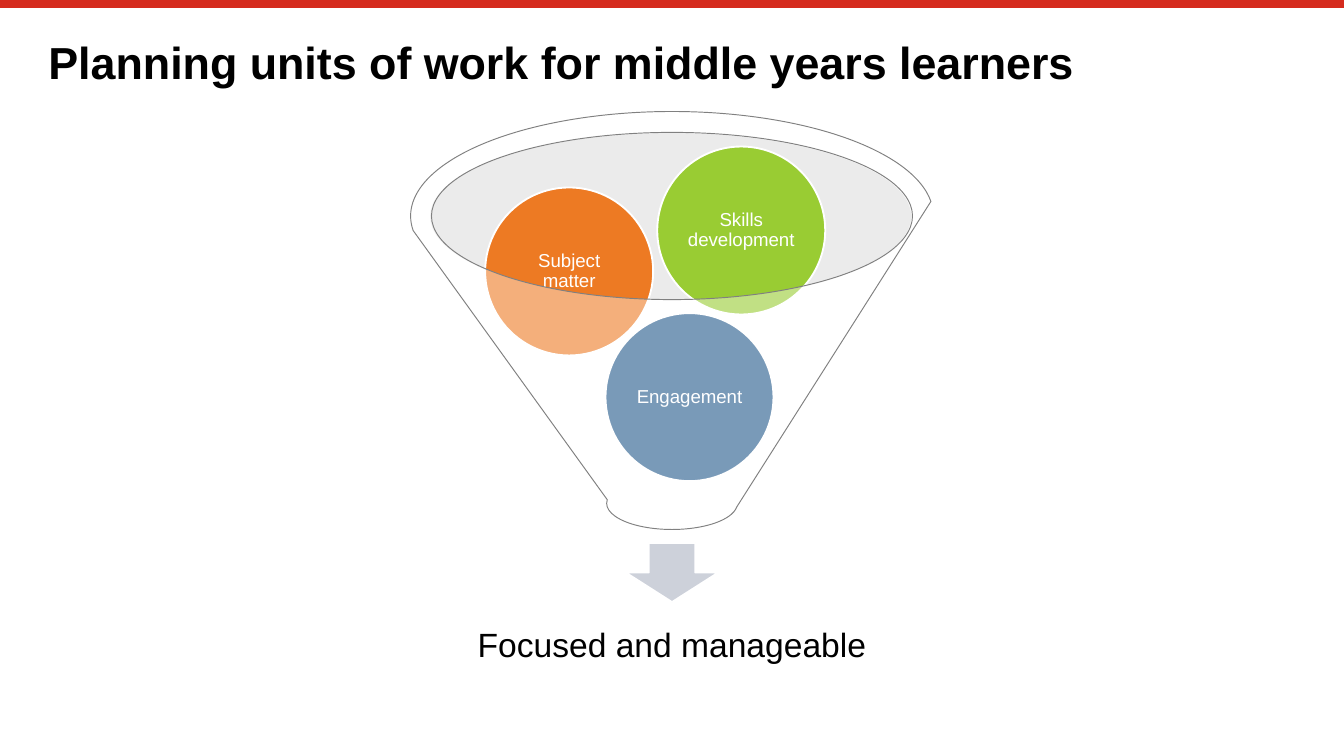
from dataclasses import dataclass
from typing import Any, Optional

import pptx
import pptx.dml.color
import pptx.enum.shapes
import pptx.enum.text
import pptx.oxml.ns
import pptx.util
from lxml import etree

WIDE = 10
HIGH = WIDE * 9 / 16
CELL = WIDE / 100
FONT = "Arial"
SHAPE = pptx.enum.shapes.MSO_SHAPE
ALIGN = pptx.enum.text.PP_ALIGN
ANCHOR = pptx.enum.text.MSO_ANCHOR


@dataclass
class Box:
    col: float
    row: float
    cols: float
    rows: float

    def place(self) -> list[int]:
        return [grid(n) for n in (self.col, self.row, self.cols, self.rows)]


@dataclass
class Ball:
    label: str
    col: float
    row: float
    fill: str


BALL_SIZE = 12.5
BALLS = [
    Ball("Engagement", 45.05, 23.3, "21578A"),
    Ball("Subject matter", 36.1, 13.95, "ED7A23"),
    Ball("Skills development", 48.9, 10.9, "99CC33"),
]


def grid(count: float) -> int:
    return pptx.util.Inches(count * CELL)


def paint(target: Any, color: str) -> None:
    target.rgb = pptx.dml.color.RGBColor.from_string(color)


def write(shape: Any, text: str, *, size: float, color: str = "000000",
          bold: bool = False, align: Any = ALIGN.CENTER,
          anchor: Any = ANCHOR.MIDDLE, inset: float = 0) -> None:
    frame = shape.text_frame
    frame.word_wrap = True
    frame.auto_size = pptx.enum.text.MSO_AUTO_SIZE.NONE
    frame.vertical_anchor = anchor
    for side in ("left", "top", "right", "bottom"):
        setattr(frame, f"margin_{side}", pptx.util.Inches(inset))
    frame.text = text
    para = frame.paragraphs[0]
    para.alignment = align
    para.line_spacing = 0.9
    para.space_before = pptx.util.Pt(0)
    para.font.name = FONT
    para.font.size = pptx.util.Pt(size)
    para.font.bold = bold
    paint(para.font.color, color)


def draw(slide: Any, kind: Any, box: Box, fill: str, *, alpha: Optional[int] = None,
         line: Optional[str] = None, weight: float = 1) -> Any:
    shape = slide.shapes.add_shape(kind, *box.place())
    shape.shadow.inherit = False
    shape.fill.solid()
    paint(shape.fill.fore_color, fill)
    if alpha is not None:
        tint = shape.fill._xPr.find(".//" + pptx.oxml.ns.qn("a:srgbClr"))
        etree.SubElement(tint, pptx.oxml.ns.qn("a:alpha"), val=str(alpha * 1000))
    if line:
        paint(shape.line.color, line)
        shape.line.width = pptx.util.Pt(weight)
    else:
        shape.line.fill.background()
    return shape


def add_stripe(slide: Any) -> None:
    row = grid(0.3)
    stripe = slide.shapes.add_connector(
        pptx.enum.shapes.MSO_CONNECTOR.STRAIGHT, 0, row, grid(100), row)
    paint(stripe.line.color, "D52B1E")
    stripe.line.width = pptx.util.Pt(4.2)
    etree.SubElement(stripe._element.spPr, pptx.oxml.ns.qn("a:effectLst"))


def add_title(slide: Any, text: str) -> None:
    title = slide.shapes.title
    title.left, title.top, title.width, title.height = Box(3.6, 3, 92.9, 3.9).place()
    write(title, text, size=24, bold=True, align=ALIGN.LEFT, anchor=ANCHOR.TOP)


def add_ball(slide: Any, ball: Ball) -> None:
    box = Box(ball.col, ball.row, BALL_SIZE, BALL_SIZE)
    shape = draw(slide, SHAPE.OVAL, box, ball.fill, line="FFFFFF")
    write(shape, ball.label, size=10, color="FFFFFF", inset=0.01)


def main() -> None:
    deck = pptx.Presentation()
    deck.slide_width = pptx.util.Inches(WIDE)
    deck.slide_height = pptx.util.Inches(HIGH)
    slide = deck.slides.add_slide(deck.slide_layouts.get_by_name("Title Only"))

    add_stripe(slide)
    add_title(slide, "Planning units of work for middle years learners")
    draw(slide, SHAPE.OVAL, Box(32, 9.9, 35.8, 12.4), "CDCDCD", alpha=40)
    draw(slide, SHAPE.DOWN_ARROW, Box(46.55, 40.4, 6.9, 4.4), "CDD1DA", line="FFFFFF")
    result = slide.shapes.add_textbox(*Box(33.35, 43.95, 33.3, 8.3).place())
    write(result, "Focused and manageable", size=18, inset=0.14)
    for ball in BALLS:
        add_ball(slide, ball)
    draw(slide, SHAPE.FUNNEL, Box(30.55, 8.3, 38.9, 31.1), "FFFFFF", alpha=40,
         line="808080", weight=0.5)

    deck.save("out.pptx")


if __name__ == "__main__":
    main()
